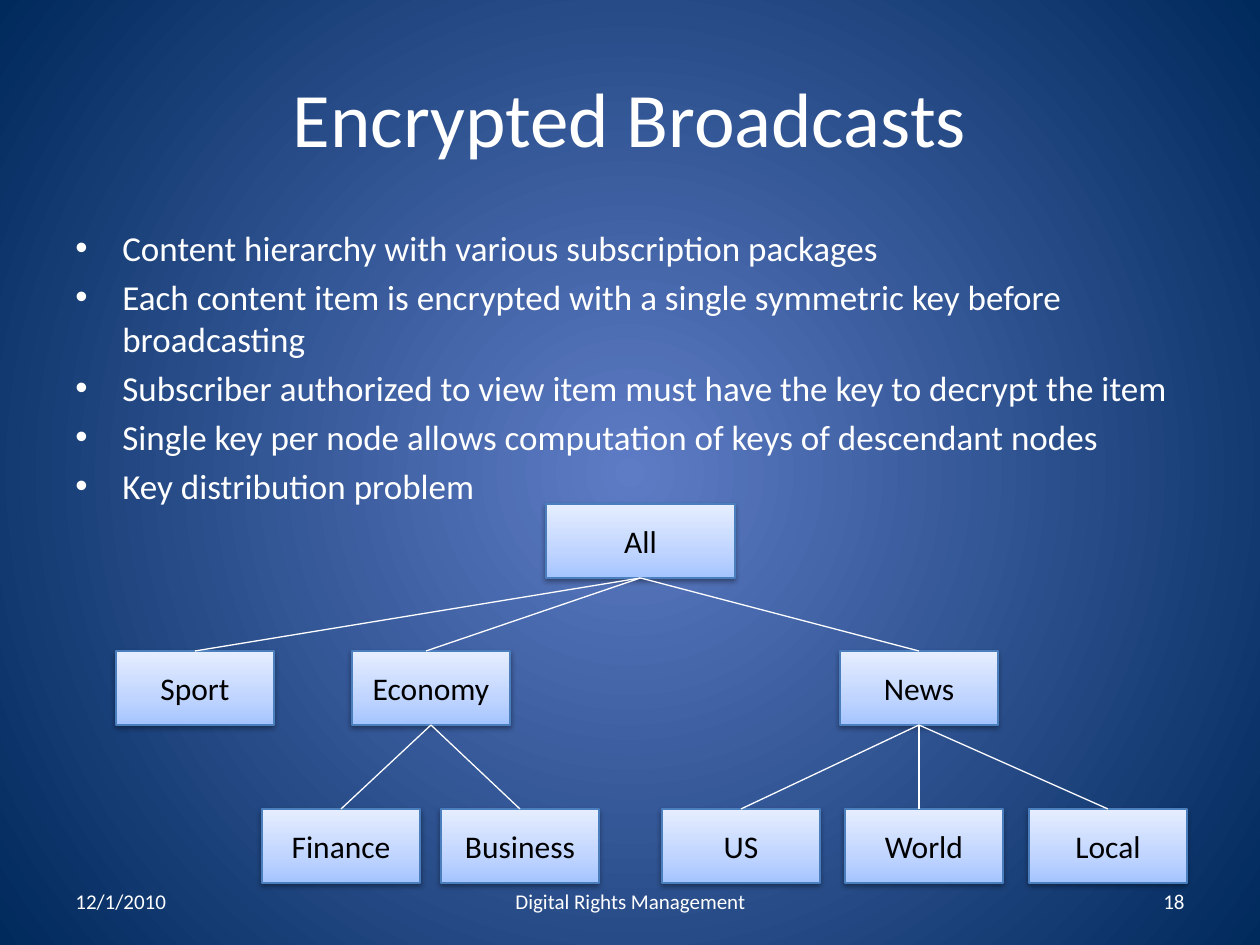
from dataclasses import dataclass

from lxml.etree import SubElement
from pptx import Presentation
from pptx.dml.color import RGBColor
from pptx.enum.shapes import MSO_CONNECTOR, MSO_SHAPE
from pptx.enum.text import MSO_ANCHOR, PP_ALIGN
from pptx.oxml.ns import qn
from pptx.oxml.xmlchemy import OxmlElement
from pptx.util import Emu, Pt


@dataclass(frozen=True)
class Theme:
    font: str = "Calibri"
    light: str = "FFFFFF"
    dark: str = "000000"
    border: str = "4B7EBC"
    backdrop: tuple = ((0, "5E7CC5"), (100, "00295C"))
    box: tuple = ((0, "A4C4FF"), (35, "BFD4FF"), (100, "E6EEFF"))
    title: int = 44
    body: int = 20
    label: int = 18
    footer: int = 12
    line: float = 0.75


THEME = Theme()
BOX_W, BOX_H = 158, 74

BULLETS = [
    "Content hierarchy with various subscription packages",
    "Each content item is encrypted with a single symmetric key before broadcasting",
    "Subscriber authorized to view item must have the key to decrypt the item",
    "Single key per node allows computation of keys of descendant nodes",
    "Key distribution problem",
]

# Name: left, top, width
NODES = {
    "Sport": (116, 651, BOX_W),
    "Economy": (352, 651, BOX_W),
    "News": (840, 651, BOX_W),
    "Local": (1029, 809, BOX_W),
    "US": (662, 809, BOX_W),
    "World": (845, 809, BOX_W),
    "Finance": (262, 809, BOX_W),
    "Business": (441, 809, BOX_W),
    "All": (546, 504, 189),
}

CHILDREN = {
    "All": ["Economy", "News", "Sport"],
    "Economy": ["Finance", "Business"],
    "News": ["US", "World", "Local"],
}

# Lines that meet a box slightly left of its centre
ENTRY_SHIFT = {"Economy": -5, "World": -5}


def px(n):
    return Emu(round(n * 914400 / 126))


def rgb(color):
    return RGBColor.from_string(color)


def set_gradient(fill, element, stops, shade, **shade_attrs):
    """Replace the first fill in element with a gradient; return its shade."""
    fill.solid()
    solid = element.find(".//" + qn("a:solidFill"))
    grad = OxmlElement("a:gradFill")
    stop_list = SubElement(grad, qn("a:gsLst"))
    for pos, color in stops:
        stop = SubElement(stop_list, qn("a:gs"), pos=str(pos * 1000))
        SubElement(stop, qn("a:srgbClr"), val=color)
    shade = SubElement(grad, qn(shade), **shade_attrs)
    solid.getparent().replace(solid, grad)
    return shade


def set_background(slide):
    shade = set_gradient(slide.background.fill, slide._element,
                         THEME.backdrop, "a:path", path="circle")
    SubElement(shade, qn("a:fillToRect"),
               {side: "50000" for side in "ltrb"})


def style_paragraph(p, text, size, color, align):
    p.text = text
    p.alignment = align
    p.font.name = THEME.font
    p.font.size = Pt(size)
    p.font.color.rgb = rgb(color)


def add_text(slide, lines, left, top, width, height, size,
             align=PP_ALIGN.LEFT, anchor=MSO_ANCHOR.MIDDLE):
    tf = slide.shapes.add_textbox(px(left), px(top), px(width), px(height)).text_frame
    tf.word_wrap = True
    tf.vertical_anchor = anchor
    for i, line in enumerate(lines):
        p = tf.add_paragraph() if i else tf.paragraphs[0]
        style_paragraph(p, line, size, THEME.light, align)
    return tf


def add_bullets(tf, indent):
    for p in tf.paragraphs:
        p.space_before = Pt(THEME.body * 0.2)
        pPr = p._p.get_or_add_pPr()
        pPr.set("marL", str(px(indent)))
        pPr.set("indent", str(-px(indent)))
        font = OxmlElement("a:buFont")
        font.set("typeface", "Arial")
        char = OxmlElement("a:buChar")
        char.set("char", "•")
        for mark in (font, char):
            pPr.find(qn("a:defRPr")).addprevious(mark)


def add_shadow(sp):
    sp.shadow.inherit = False
    effects = sp._element.spPr.find(qn("a:effectLst"))
    shadow = SubElement(effects, qn("a:outerShdw"), blurRad=str(Pt(3.1)),
                        dist=str(Pt(1.6)), dir="5400000", rotWithShape="0")
    color = SubElement(shadow, qn("a:srgbClr"), val=THEME.dark)
    SubElement(color, qn("a:alpha"), val="38000")


def add_node(slide, name, left, top, width):
    sp = slide.shapes.add_shape(MSO_SHAPE.RECTANGLE, px(left), px(top),
                                px(width), px(BOX_H))
    set_gradient(sp.fill, sp._element.spPr, THEME.box, "a:lin",
                 ang="16200000", scaled="0")
    sp.line.color.rgb = rgb(THEME.border)
    sp.line.width = Pt(THEME.line)
    add_shadow(sp)
    tf = sp.text_frame
    tf.word_wrap = False
    tf.vertical_anchor = MSO_ANCHOR.MIDDLE
    style_paragraph(tf.paragraphs[0], name, THEME.label, THEME.dark, PP_ALIGN.CENTER)


def add_branch(slide, parent, child):
    left, top, width = NODES[parent]
    child_left, child_top, child_width = NODES[child]
    end_x = child_left + child_width / 2 + ENTRY_SHIFT.get(child, 0)
    line = slide.shapes.add_connector(
        MSO_CONNECTOR.STRAIGHT, px(left + width / 2), px(top + BOX_H),
        px(end_x), px(child_top))
    line.line.color.rgb = rgb(THEME.light)
    line.line.width = Pt(THEME.line)
    SubElement(line._element.spPr, qn("a:effectLst"))


def main():
    prs = Presentation()
    prs.slide_width, prs.slide_height = px(1260), px(945)
    slide = prs.slides.add_slide(prs.slide_layouts[6])
    set_background(slide)

    # Title and bullets
    add_text(slide, ["Encrypted Broadcasts"], 63, 38, 1134, 157,
             THEME.title, PP_ALIGN.CENTER)
    body = add_text(slide, BULLETS, 63, 220, 1144, 325, THEME.body,
                    anchor=MSO_ANCHOR.TOP)
    add_bullets(body, 47)

    # Footer
    for text, left, width, align in [
        ("12/1/2010", 63, 294, PP_ALIGN.LEFT),
        ("Digital Rights Management", 431, 399, PP_ALIGN.CENTER),
        ("18", 903, 294, PP_ALIGN.RIGHT),
    ]:
        add_text(slide, [text], left, 876, width, 50, THEME.footer, align)

    # Content tree
    for name, place in NODES.items():
        add_node(slide, name, *place)
    for parent, children in CHILDREN.items():
        for child in children:
            add_branch(slide, parent, child)

    prs.save("out.pptx")


if __name__ == "__main__":
    main()
